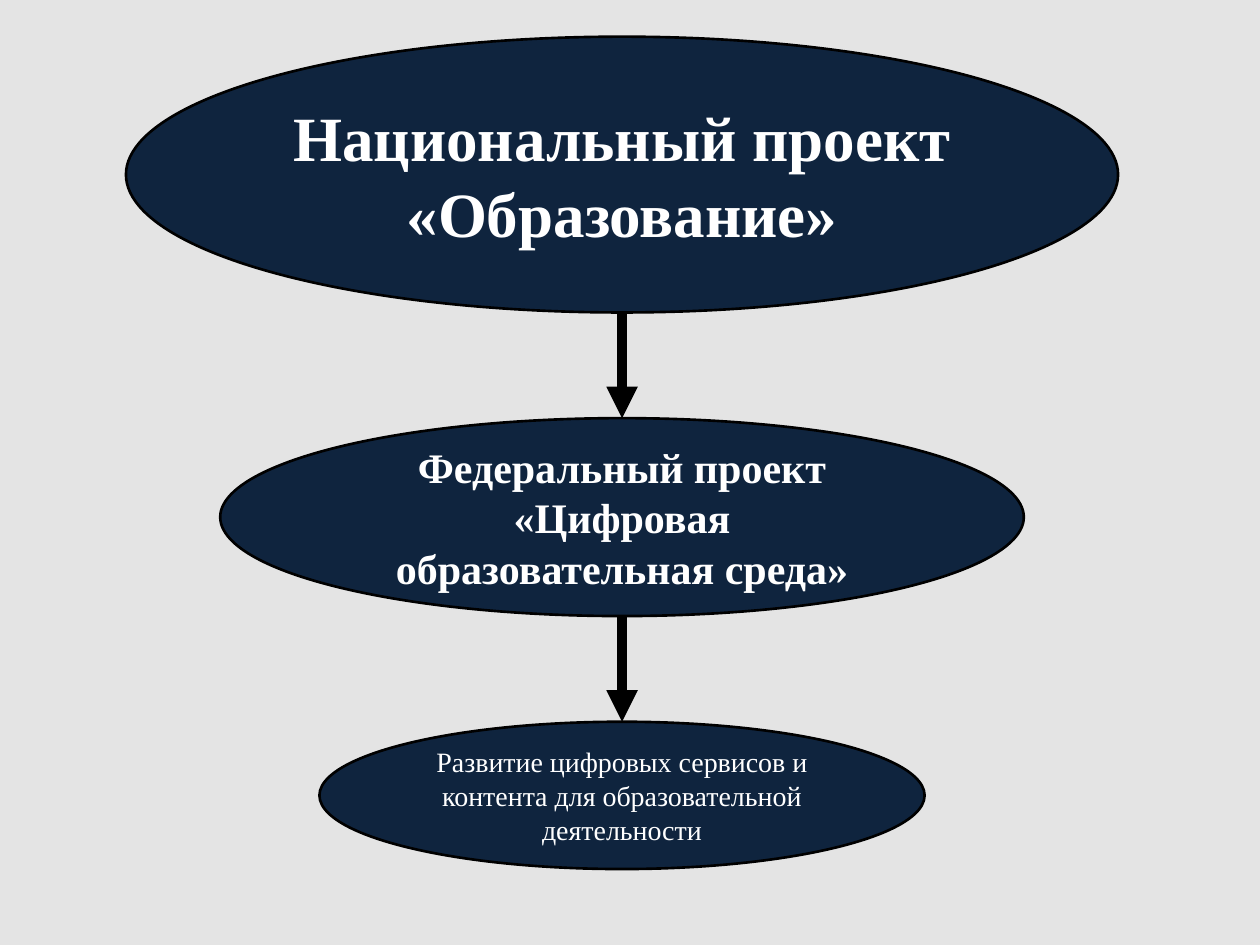
from lxml import etree
from pptx import Presentation
from pptx.dml.color import RGBColor
from pptx.enum.shapes import MSO_CONNECTOR as Connector, MSO_SHAPE as Shape
from pptx.enum.text import MSO_ANCHOR as Anchor, PP_ALIGN as Align
from pptx.oxml.ns import qn
from pptx.util import Cm, Pt

COLORS = {"background": "E4E4E4", "navy": "0F243E", "black": "000000", "white": "FFFFFF"}
FONT = "Times New Roman"
CENTER = 12.54
TOP = 0.74
GAP = 2.13

# Width, height, text size, bold, paragraphs
LEVELS = [
    (20, 5.56, 36, True, ["Национальный проект", "«Образование»"]),
    (16.2, 3.99, 24, True, ["Федеральный проект", "«Цифровая образовательная среда»"]),
    (12.2, 2.97, 16, False,
     ["Развитие цифровых сервисов и контента для образовательной деятельности"]),
]


def color(name):
    return RGBColor.from_string(COLORS[name])


def add_level(slide, left, top, width, height, size, bold, lines):
    """Place one project ellipse with its centred text."""
    ellipse = slide.shapes.add_shape(Shape.OVAL, Cm(left), Cm(top), Cm(width), Cm(height))
    ellipse.shadow.inherit = False
    ellipse.fill.solid()
    ellipse.fill.fore_color.rgb = color("navy")
    ellipse.line.color.rgb = color("black")
    ellipse.line.width = Pt(1.5)

    frame = ellipse.text_frame
    frame.word_wrap = True
    frame.vertical_anchor = Anchor.MIDDLE
    for index, line in enumerate(lines):
        paragraph = frame.add_paragraph() if index else frame.paragraphs[0]
        paragraph.alignment = Align.CENTER
        run = paragraph.add_run()
        run.text = line
        run.font.name = FONT
        run.font.size = Pt(size)
        run.font.bold = bold
        run.font.color.rgb = color("white")
    return ellipse


def add_arrow(slide, upper, lower):
    """Draw a thick arrow down from one ellipse to the top of the next."""
    arrow = slide.shapes.add_connector(
        Connector.STRAIGHT, Cm(CENTER), upper.top + upper.height, Cm(CENTER), lower.top)
    arrow.line.color.rgb = color("black")
    arrow.line.width = Pt(6)
    etree.SubElement(arrow.line._get_or_add_ln(), qn("a:tailEnd"), type="triangle")
    etree.SubElement(arrow._element.spPr, qn("a:effectLst"))


def add_hierarchy(slide, center, top):
    """Stack the project levels and link each to the next."""
    ellipses = []
    for width, height, size, bold, lines in LEVELS:
        ellipses.append(
            add_level(slide, center - width / 2, top, width, height, size, bold, lines))
        top += height + GAP
    for upper, lower in zip(ellipses, ellipses[1:]):
        add_arrow(slide, upper, lower)


def main():
    presentation = Presentation()
    presentation.slide_width, presentation.slide_height = Cm(25.4), Cm(19.05)
    slide = presentation.slides.add_slide(presentation.slide_layouts[6])
    slide.background.fill.solid()
    slide.background.fill.fore_color.rgb = color("background")
    add_hierarchy(slide, CENTER, TOP)
    presentation.save("out.pptx")


if __name__ == "__main__":
    main()
